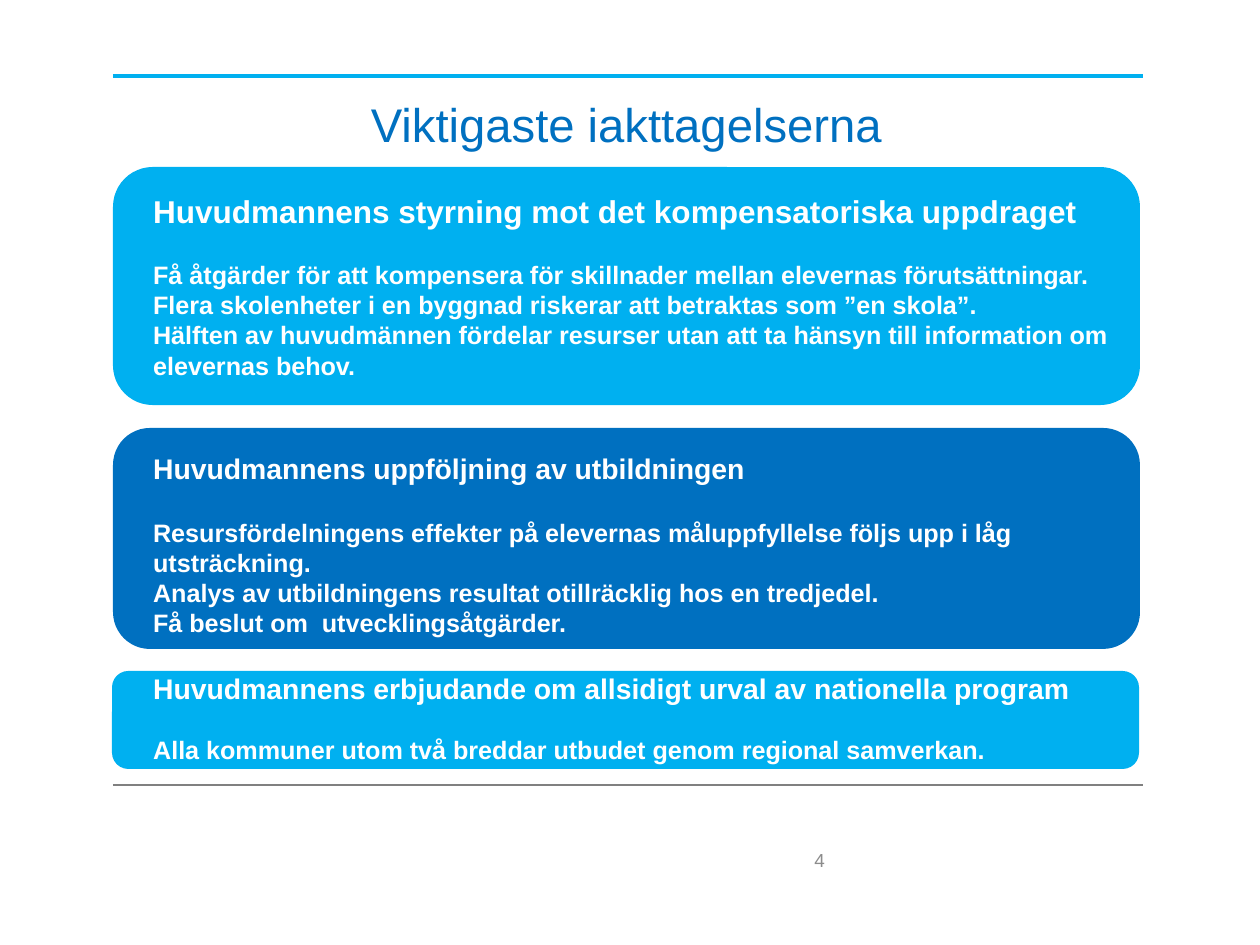
"""Builds the slide on the main findings."""
import pptx
import pptx.chart.data
import pptx.dml.color
import pptx.enum.shapes
import pptx.enum.text
import pptx.oxml
import pptx.util

PX = 10160000 / 1260
COLORS = {"sky": "00B0F0", "blue": "0070C0", "white": "FFFFFF",
          "rule": "808080", "number": "8C8C8C"}
ALIGN = pptx.enum.text.PP_ALIGN
ANCHOR = pptx.enum.text.MSO_ANCHOR

FINDINGS = [
    {"panel": (113, 167, 1027, 238), "text": (142, 186, 998, 237),
     "color": "sky", "size": 20, "gap": 19,
     "heading": "Huvudmannens styrning mot det kompensatoriska uppdraget",
     "body": ["Få åtgärder för att kompensera för skillnader mellan elevernas förutsättningar.",
              "Flera skolenheter i en byggnad riskerar att betraktas som ”en skola”.",
              "Hälften av huvudmännen fördelar resurser utan att ta hänsyn till "
              "information om elevernas behov."]},
    {"panel": (113, 428, 1027, 221), "text": (142, 446, 1033, 229),
     "color": "blue", "size": 18, "gap": 20,
     "heading": "Huvudmannens uppföljning av utbildningen",
     "body": ["Resursfördelningens effekter på elevernas måluppfyllelse följs upp i låg utsträckning.",
              "Analys av utbildningens resultat otillräcklig hos en tredjedel.",
              "Få beslut om  utvecklingsåtgärder."]},
    {"panel": (112, 671, 1027, 98), "text": (142, 666, 962, 101),
     "color": "sky", "size": 18, "gap": 18,
     "heading": "Huvudmannens erbjudande om allsidigt urval av nationella program",
     "body": ["Alla kommuner utom två breddar utbudet genom regional samverkan."]},
]


def emu(*lengths):
    """Turn px lengths into EMU."""
    return [pptx.util.Emu(round(n * PX)) for n in lengths]


def rgb(name):
    """Look up a named colour."""
    return pptx.dml.color.RGBColor.from_string(COLORS[name])


def add_rule(s, y, color, width):
    """Draw a horizontal rule across the content area."""
    line = s.shapes.add_connector(pptx.enum.shapes.MSO_CONNECTOR.STRAIGHT,
                                  *emu(113, y, 1143, y))
    line.line.color.rgb = rgb(color)
    line.line.width = pptx.util.Pt(width)
    line._element.spPr.append(pptx.oxml.parse_xml(
        '<a:effectLst xmlns:a="http://schemas.openxmlformats.org/drawingml/2006/main"/>'))


def add_panel(s, box, color):
    """Draw a rounded panel."""
    sp = s.shapes.add_shape(pptx.enum.shapes.MSO_SHAPE.ROUNDED_RECTANGLE, *emu(*box))
    sp.shadow.inherit = False
    sp.fill.solid()
    sp.fill.fore_color.rgb = rgb(color)
    sp.line.fill.background()


def add_frame(s, box, anchor=ANCHOR.TOP):
    """Add a wrapping text box and return its text frame."""
    tf = s.shapes.add_textbox(*emu(*box)).text_frame
    tf.word_wrap = True
    tf.vertical_anchor = anchor
    return tf


def add_text(tf, text, size=16, color="white", bold=False, align=ALIGN.LEFT,
             before=0, spacing=None):
    """Write one formatted paragraph, using the empty first one if free."""
    p = tf.add_paragraph() if tf.text else tf.paragraphs[0]
    p.alignment = align
    if before:
        p.space_before = pptx.util.Pt(before)
    if spacing:
        p.line_spacing = spacing
    r = p.add_run()
    r.text = text
    r.font.name = "Arial"
    r.font.size = pptx.util.Pt(size)
    r.font.bold = bold
    r.font.color.rgb = rgb(color)


def add_finding(s, finding):
    """Draw a panel with its heading and statements."""
    add_panel(s, finding["panel"], finding["color"])
    tf = add_frame(s, finding["text"])
    add_text(tf, finding["heading"], size=finding["size"], bold=True)
    for i, statement in enumerate(finding["body"]):
        add_text(tf, statement, bold=True, before=0 if i else finding["gap"])


def main():
    """Build and save the slide."""
    prs = pptx.Presentation()
    prs.slide_width, prs.slide_height = emu(1260, 945)
    s = prs.slides.add_slide(prs.slide_layouts[6])
    add_rule(s, 76, "sky", 3)
    add_rule(s, 785, "rule", 1)
    add_text(add_frame(s, (113, 96, 1027, 70)), "Viktigaste iakttagelserna",
             size=30, color="blue", align=ALIGN.CENTER, spacing=0.9)
    for finding in FINDINGS:
        add_finding(s, finding)
    add_text(add_frame(s, (772, 827, 64, 50), ANCHOR.BOTTOM), "4",
             size=12, color="number", align=ALIGN.RIGHT)
    prs.save("out.pptx")


if __name__ == "__main__":
    main()
